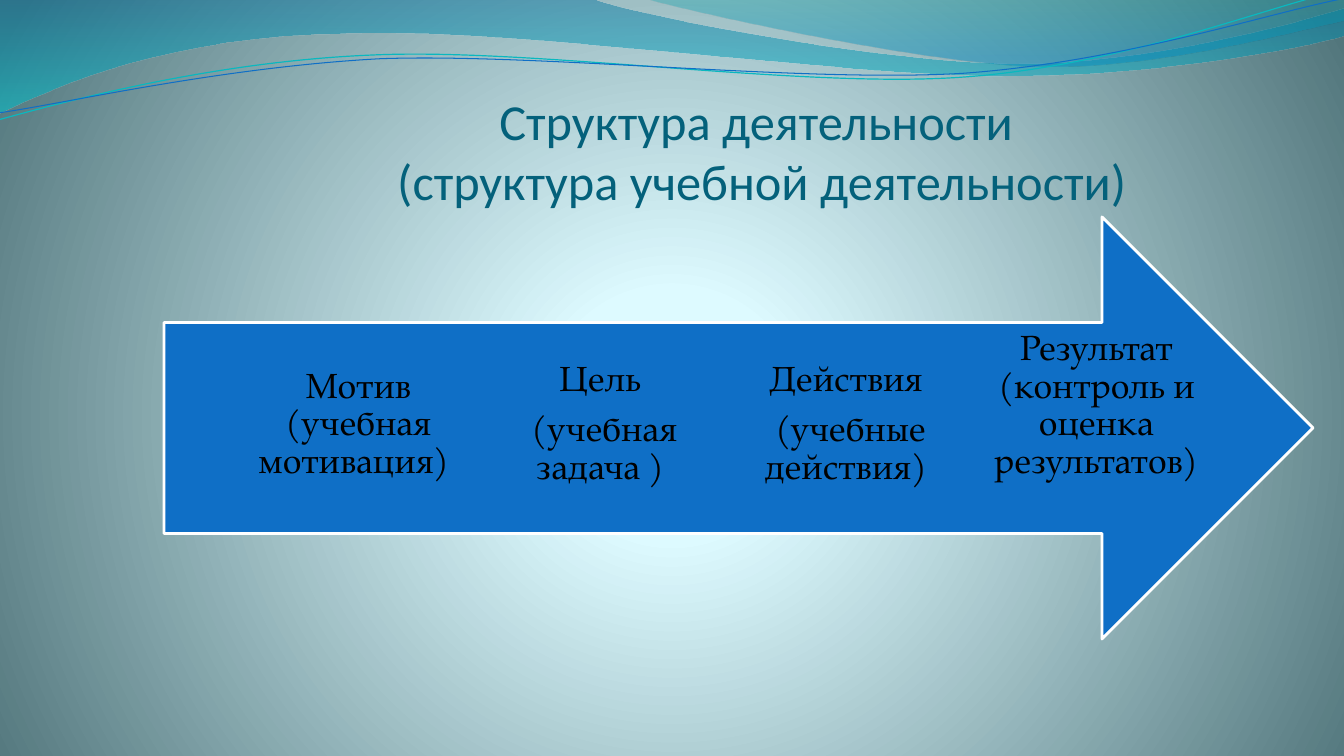
from lxml import etree
from pptx import Presentation
from pptx.dml.color import RGBColor
from pptx.enum.shapes import MSO_SHAPE
from pptx.enum.text import MSO_ANCHOR, MSO_AUTO_SIZE, PP_ALIGN
from pptx.oxml import parse_xml
from pptx.oxml.ns import nsdecls, qn
from pptx.util import Pt

PX = 12192000 / 1344


def px(*lengths):
    return [round(length * PX) for length in lengths]


def set_gradient(properties, stops, direction):
    stop_xml = "".join(
        f'<a:gs pos="{position * 1000}"><a:srgbClr val="{color}">'
        f'<a:alpha val="{alpha * 1000}"/></a:srgbClr></a:gs>'
        for position, color, alpha in stops
    )
    gradient = parse_xml(
        f'<a:gradFill {nsdecls("a")} rotWithShape="1">'
        f"<a:gsLst>{stop_xml}</a:gsLst>{direction}</a:gradFill>"
    )
    properties.replace(properties.find(qn("a:noFill")), gradient)


presentation = Presentation()
presentation.slide_width, presentation.slide_height = px(1344, 756)
slide = presentation.slides.add_slide(presentation.slide_layouts[5])
shapes = slide.shapes

slide.background.fill.background()
set_gradient(
    slide.element.find(".//" + qn("p:bgPr")),
    [(0, "DEFBFF", 100), (16, "DDFAFF", 100), (100, "52767C", 100)],
    '<a:path path="circle"><a:fillToRect l="10000" t="110000" r="10000" b="100000"/></a:path>',
)

bands = [
    ((0, 0), [
        [(592, -1)],
        [(639, 17), (892, 64), (1019, 64)],
        [(1147, 64), (1288, 26), (1344, 9)],
        [(1346, 36)],
        [(1321, 44), (1169, 77), (1002, 76)],
        [(836, 76), (513, 28), (346, 34)],
        [(173, 36), (61, 84), (-1, 114)],
    ], [(0, "0074A1", 45), (100, "00C6CF", 55)]),
    ((644, -1), [
        [(684, 11), (916, 62), (1033, 66)],
        [(1150, 70), (1292, 32), (1344, 21)],
        [(1344, 0)],
    ], [(0, "00A1A9", 30), (80, "008BBF", 45)]),
]
ripples = [
    ((-3, 88), [
        [(64, 73), (213, 40), (372, 41)],
        [(532, 41), (794, 94), (957, 91)],
        [(1118, 88), (1264, 36), (1344, 22)],
    ], ("0AB8BF", 0.85)),
    ((-2, 81), [
        [(63, 75), (220, 46), (381, 45)],
        [(541, 47), (801, 89), (962, 87)],
        [(1123, 83), (1266, 42), (1347, 30)],
    ], ("0F6FC6", 0.75)),
]
for start, segments, paint in bands + ripples:
    is_band = isinstance(paint, list)
    builder = shapes.build_freeform(*px(*start))
    builder.add_line_segments(
        [px(*point) for segment in segments for point in segment], close=is_band
    )
    wave = builder.convert_to_shape()
    edges = iter(wave.element.findall(".//" + qn("a:lnTo")))
    for segment in segments:
        edge = next(edges)
        if len(segment) == 3:
            edge.addprevious(curve := etree.Element(qn("a:cubicBezTo")))
            for part in (edge, next(edges), next(edges)):
                curve.append(part[0])
                part.getparent().remove(part)
    wave.shadow.inherit = False
    wave.fill.background()
    if is_band:
        wave.line.fill.background()
        set_gradient(wave.element.spPr, paint, '<a:lin ang="5400000" scaled="0"/>')
    else:
        color, width = paint
        wave.rotation = 357.3
        wave.line.color.rgb = RGBColor.from_string(color)
        wave.line.width = Pt(width)

title = shapes.title
shapes.element.append(title.element)
title.left, title.top, title.width, title.height = px(211, 30, 1102, 181)
heading = title.text_frame
heading.text = "Структура деятельности \v(структура учебной деятельности)"
heading.auto_size = MSO_AUTO_SIZE.NONE
heading.vertical_anchor = MSO_ANCHOR.BOTTOM
heading.margin_left, heading.margin_top, heading.margin_right, heading.margin_bottom = px(0, 5, 0, 0)
heading_line = heading.paragraphs[0]
heading_line.alignment = PP_ALIGN.CENTER
heading_line.font.size = Pt(36)
heading_line.font.name = "Calibri"
heading_line.font.color.rgb = RGBColor.from_string("04617B")

arrow = shapes.add_shape(MSO_SHAPE.RIGHT_ARROW, *px(164, 217, 1149, 422))
arrow.shadow.inherit = False
arrow.fill.solid()
arrow.fill.fore_color.rgb = RGBColor.from_string("0F6FC6")
arrow.line.color.rgb = RGBColor.from_string("FFFFFF")
arrow.line.width = Pt(2)

stages = [
    (319, ["Мотив (учебная мотивация) "]),
    (319, ["Цель ", "(учебная задача ) "]),
    (319, ["Действия ", "(учебные действия) "]),
    (300, ["Результат (контроль и оценка результатов)"]),
]
for column, (top, lines) in enumerate(stages):
    stage = shapes.add_textbox(*px(256 + 246 * column, top, 205, 211)).text_frame
    stage.word_wrap = True
    stage.vertical_anchor = MSO_ANCHOR.MIDDLE
    stage.margin_left, stage.margin_top, stage.margin_right, stage.margin_bottom = px(0, 28, 0, 28)
    stage.text = "\n".join(lines)
    for paragraph in stage.paragraphs:
        paragraph.alignment = PP_ALIGN.CENTER
        paragraph.line_spacing = 0.9
        paragraph.space_after = Pt(8.75)
        paragraph.font.size = Pt(25)
        paragraph.font.name = "TeX Gyre Pagella"
        paragraph.font.color.rgb = RGBColor.from_string("000000")

presentation.save("out.pptx")
